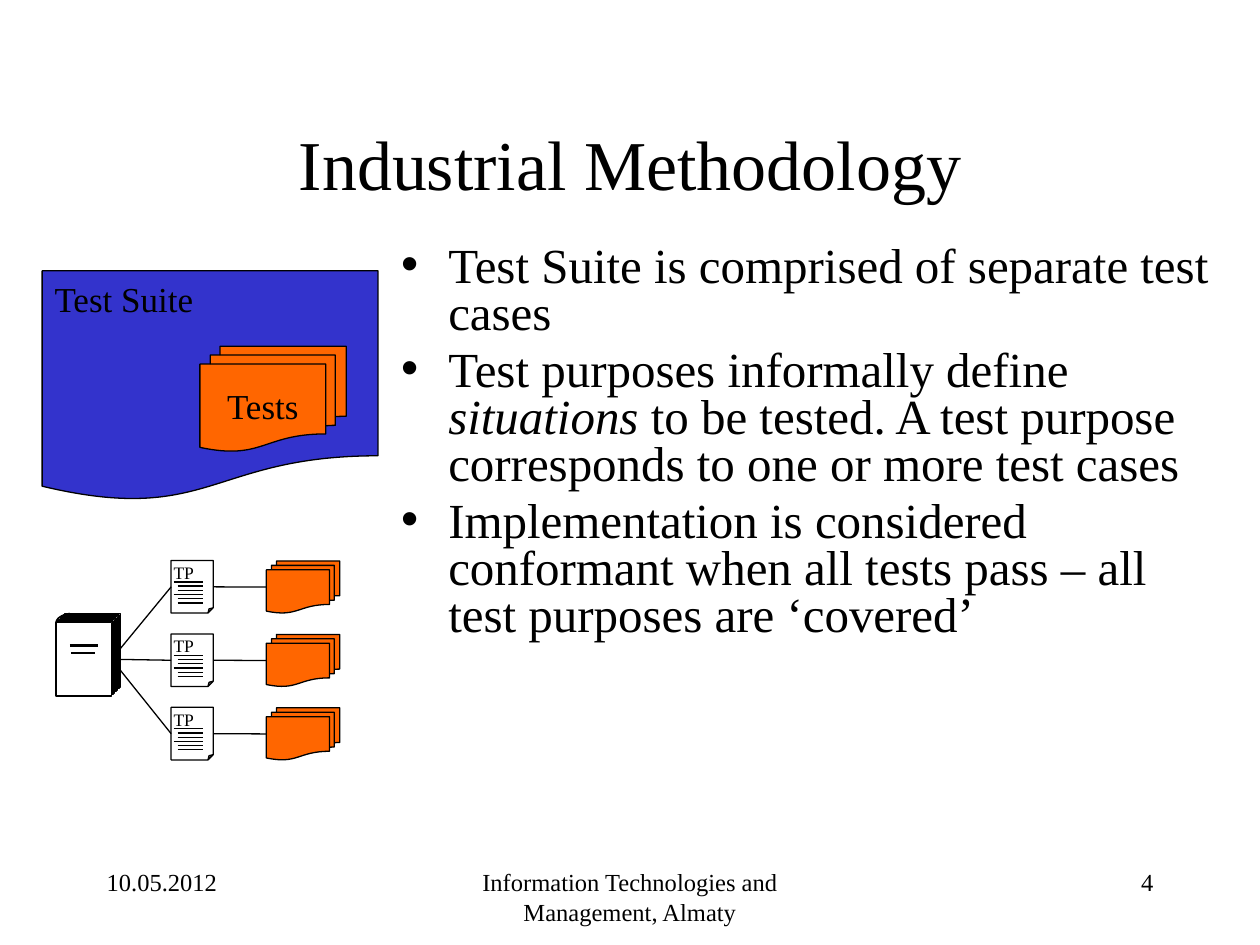
from collections import namedtuple

from lxml import etree
from pptx import Presentation
from pptx.dml.color import RGBColor
from pptx.enum.shapes import MSO_CONNECTOR, MSO_SHAPE
from pptx.enum.text import MSO_ANCHOR, MSO_AUTO_SIZE, PP_ALIGN
from pptx.oxml.ns import qn
from pptx.util import Cm, Pt

BLACK = RGBColor(0x00, 0x00, 0x00)
WHITE = RGBColor(0xFF, 0xFF, 0xFF)
BLUE = RGBColor(0x33, 0x33, 0xCC)
ORANGE = RGBColor(0xFF, 0x66, 0x00)
FONT = "Times New Roman"

# All box values are centimetres.
Box = namedtuple("Box", "left top width height")

BULLETS = [
    [("Test Suite is comprised of separate test cases", False)],
    [("Test purposes informally define ", False),
     ("situations ", True),
     ("to be tested. A test purpose corresponds to one or more test cases", False)],
    [("Implementation is considered conformant when all tests pass – "
      "all test purposes are ‘covered’", False)],
]


def lengths(box):
    return [Cm(value) for value in box]


def place(shape, box):
    shape.left, shape.top, shape.width, shape.height = lengths(box)


def style_font(font, size, italic=None):
    font.name = FONT
    font.size = Pt(size)
    font.italic = italic
    font.color.rgb = BLACK


def write(shape, text, size, align=PP_ALIGN.LEFT, anchor=MSO_ANCHOR.TOP, wrap=True):
    frame = shape.text_frame
    frame.text = text
    frame.word_wrap = wrap
    frame.vertical_anchor = anchor
    para = frame.paragraphs[0]
    para.alignment = align
    style_font(para.runs[0].font, size)


def add_outlined(shapes, kind, box, fill):
    shape = shapes.add_shape(kind, *lengths(box))
    shape.shadow.inherit = False
    shape.fill.solid()
    shape.fill.fore_color.rgb = fill
    shape.line.color.rgb = BLACK
    shape.line.width = Pt(0.75)
    return shape


def add_line(shapes, start=(0, 0), end=(0, 0), width=0.75):
    line = shapes.add_connector(
        MSO_CONNECTOR.STRAIGHT, *lengths(start), *lengths(end))
    line.line.color.rgb = BLACK
    line.line.width = Pt(width)
    etree.SubElement(line._element.spPr, qn("a:effectLst"))
    return line


def join(shapes, source, target):
    """Join the right side of source to the left side of target."""
    line = add_line(shapes)
    line.begin_connect(source, 3)
    line.end_connect(target, 1)


def add_title(page, box):
    title = page.shapes.title
    place(title, box)
    write(title, "Industrial Methodology", 40, PP_ALIGN.CENTER, MSO_ANCHOR.MIDDLE)


def add_bullets(page, box):
    body = page.placeholders[1]
    place(body, box)
    frame = body.text_frame
    frame.auto_size = MSO_AUTO_SIZE.NONE
    for index, pieces in enumerate(BULLETS):
        para = frame.add_paragraph() if index else frame.paragraphs[0]
        para.line_spacing = 0.8
        if index == 0:
            para.space_before = Pt(0)
        for text, italic in pieces:
            span = para.add_run()
            span.text = text
            style_font(span.font, 28, italic)


def add_test_suite(page, box):
    suite = add_outlined(page.shapes, MSO_SHAPE.FLOWCHART_DOCUMENT, box, BLUE)
    write(suite, "Test Suite", 20, wrap=False)
    tests_box = Box(box.left + 3.18, box.top + 1.52, 2.95, 2.12)
    tests = add_outlined(
        page.shapes, MSO_SHAPE.FLOWCHART_MULTIDOCUMENT, tests_box, ORANGE)
    write(tests, "Tests", 20, PP_ALIGN.CENTER, MSO_ANCHOR.MIDDLE, wrap=False)


def add_spine(shapes, left, top, width, height):
    """Draw the rounded corner at the back of the book."""
    corners = [(width, 0), (width * 0.45, height * 0.12),
               (0, height * 0.45), (0, height)]
    points = []
    for step in range(9):
        t = step / 8
        weights = [(1 - t) ** 3, 3 * t * (1 - t) ** 2, 3 * t * t * (1 - t), t ** 3]
        points.append(tuple(
            Cm(start + sum(w * corner[axis] for w, corner in zip(weights, corners)))
            for axis, start in enumerate((left, top))))
    builder = shapes.build_freeform(*points[0])
    builder.add_line_segments(points[1:], close=False)
    curve = builder.convert_to_shape()
    curve.shadow.inherit = False
    curve.fill.background()
    curve.line.color.rgb = BLACK
    curve.line.width = Pt(1)


def add_book(page, box):
    """Draw stacked sheets and return the front one."""
    shapes = page.shapes.add_group_shape().shapes
    sheets, step = 7, 0.03
    depth = (sheets - 1) * step
    for index in range(sheets):
        if index == 3:
            add_spine(shapes, box.left, box.top, 0.28, 0.2)
        sheet_box = Box(box.left + depth - index * step, box.top + index * step,
                        box.width - depth, box.height - depth)
        front = add_outlined(shapes, MSO_SHAPE.RECTANGLE, sheet_box, WHITE)
    for start, end, drop in [(0.28, 0.84, 0.64), (0.31, 0.79, 0.79)]:
        add_line(shapes, (box.left + start, box.top + drop),
                 (box.left + end, box.top + drop), 1.5)
    return front


def set_fold(sheet, share):
    """Set the folded corner's size as a share of the sheet's width."""
    geometry = sheet._element.spPr.find(qn("a:prstGeom"))
    guides = geometry.find(qn("a:avLst"))
    if guides is None:
        guides = etree.SubElement(geometry, qn("a:avLst"))
    etree.SubElement(guides, qn("a:gd"), name="adj", fmla=f"val {round(share * 100000)}")


def add_purpose(page, box):
    """Draw one test purpose sheet with ruled lines and return it."""
    shapes = page.shapes.add_group_shape().shapes
    sheet = add_outlined(shapes, MSO_SHAPE.FOLDED_CORNER, box, WHITE)
    set_fold(sheet, 0.125)
    write(sheet, "TP", 10)
    frame = sheet.text_frame
    frame.margin_left, frame.margin_top = Cm(0.05), Cm(0.03)
    frame.margin_right, frame.margin_bottom = Cm(0.25), Cm(0.13)
    for index in range(6):
        indent = 0.13 if index % 3 else 0.05
        level = box.top + 0.43 + index * 0.085
        add_line(shapes, (box.left + indent, level), (box.left + 0.64, level))
    return sheet


def add_coverage(page, box):
    """Draw the book, its test purposes and the tests covering each."""
    book = add_book(page, Box(box.left, box.top + 1.07, 1.3, 1.66))
    for row in range(3):
        top = box.top + row * 1.48
        purpose = add_purpose(page, Box(box.left + 2.32, top, 0.85, 1.06))
        tests = add_outlined(
            page.shapes, MSO_SHAPE.FLOWCHART_MULTIDOCUMENT,
            Box(box.left + box.width - 1.48, top + 0.01, 1.48, 1.05), ORANGE)
        join(page.shapes, book, purpose)
        join(page.shapes, purpose, tests)


def add_footer(page, box):
    side, middle = 5.29, 8.04
    parts = [
        ("10.05.2012", 0, side, PP_ALIGN.LEFT),
        ("Information Technologies and Management, Almaty",
         (box.width - middle) / 2, middle, PP_ALIGN.CENTER),
        ("4", box.width - side, side, PP_ALIGN.RIGHT),
    ]
    for text, offset, width, align in parts:
        part_box = Box(box.left + offset, box.top, width, box.height)
        write(page.shapes.add_textbox(*lengths(part_box)), text, 14, align)


def main():
    deck = Presentation()
    deck.slide_width, deck.slide_height = Cm(25.4), Cm(19.05)
    page = deck.slides.add_slide(deck.slide_layouts[1])
    add_title(page, Box(1.9, 1.69, 21.6, 3.18))
    add_bullets(page, Box(7.83, 4.83, 17.04, 12.22))
    add_test_suite(page, Box(0.85, 5.46, 6.77, 4.65))
    add_coverage(page, Box(1.13, 11.3, 5.72, 4.02))
    add_footer(page, Box(1.9, 17.36, 21.6, 1.27))
    deck.save("out.pptx")


if __name__ == "__main__":
    main()
